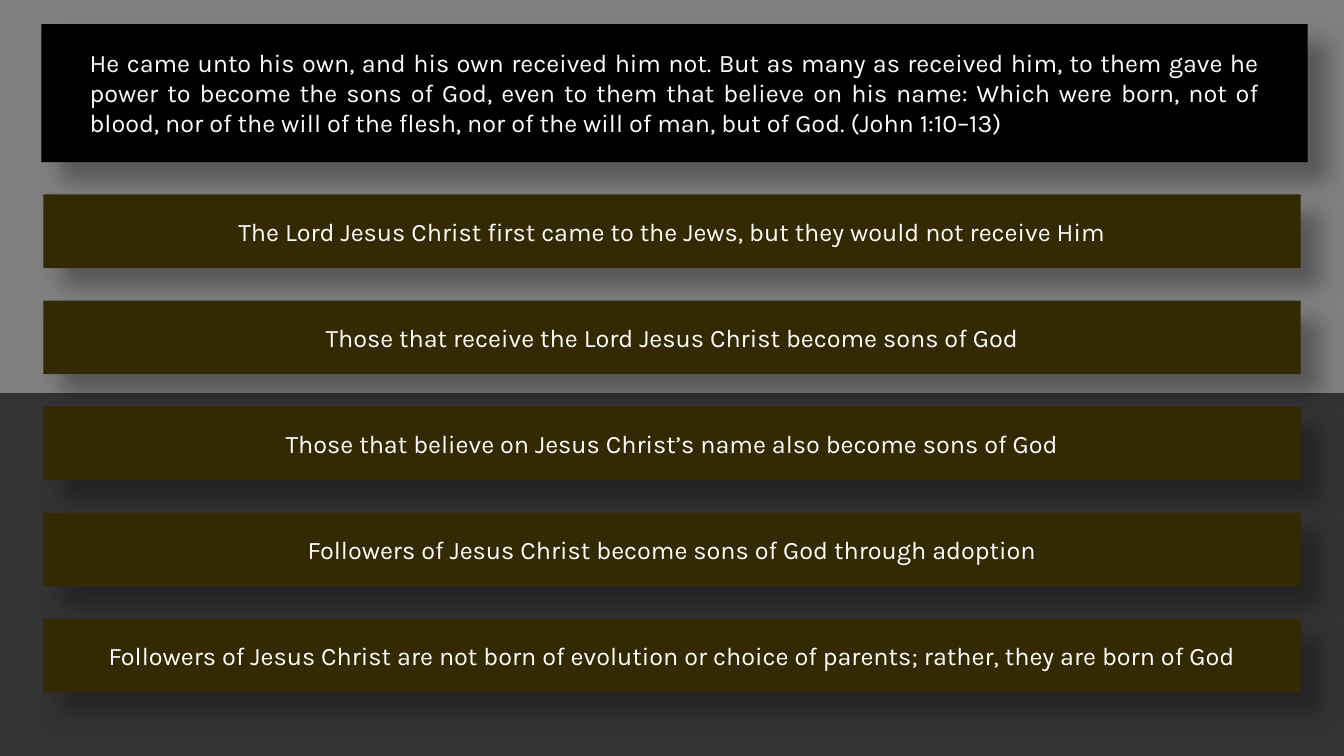
from lxml.etree import SubElement
from pptx import Presentation
from pptx.dml.color import RGBColor
from pptx.enum.shapes import MSO_SHAPE
from pptx.enum.text import MSO_ANCHOR, MSO_AUTO_SIZE, PP_ALIGN
from pptx.oxml.ns import qn
from pptx.util import Inches, Pt

WIDTH, HEIGHT = 13.33, 7.5
VERSE = (
    "He came unto his own, and his own received him not. But as many as received him, "
    "to them gave he power to become the sons of God, even to them that believe on his name: "
    "Which were born, not of blood, nor of the will of the flesh, nor of the will of man, "
    "but of God. (John 1:10–13)"
)
POINTS = [
    "The Lord Jesus Christ first came to the Jews, but they would not receive Him",
    "Those that receive the Lord Jesus Christ become sons of God",
    "Those that believe on Jesus Christ’s name also become sons of God",
    "Followers of Jesus Christ become sons of God through adoption",
    "Followers of Jesus Christ are not born of evolution or choice of parents; "
    "rather, they are born of God",
]


def color(value):
    return RGBColor.from_string(value)


class VerseSlide:
    font, size = "Karla", 18
    black, white, brown = "000000", "FFFFFF", "332903"

    def __init__(self, presentation):
        self.slide = presentation.slides.add_slide(presentation.slide_layouts[6])
        background = self.slide.background.fill
        background.solid()
        background.fore_color.rgb = color(self.white)

    def rectangle(self, left, top, width, height, fill):
        shape = self.slide.shapes.add_shape(
            MSO_SHAPE.RECTANGLE, Inches(left), Inches(top), Inches(width), Inches(height))
        shape.shadow.inherit = False
        shape.fill.solid()
        shape.fill.fore_color.rgb = color(fill)
        shape.line.fill.background()
        return shape

    def band(self, top, height, opacity):
        shape = self.rectangle(0, top, WIDTH, height, self.black)
        tone = shape._element.spPr.find(f"{qn('a:solidFill')}/{qn('a:srgbClr')}")
        SubElement(tone, qn("a:alpha"), val=str(opacity * 1000))

    def panel(self, left, top, width, height, fill):
        shape = self.rectangle(left, top, width, height, fill)
        effects = shape._element.spPr.find(qn("a:effectLst"))
        shadow = SubElement(
            effects, qn("a:outerShdw"), blurRad=str(Pt(15)), dist=str(Pt(18)),
            dir=str(45 * 60000), algn="tl", rotWithShape="0")
        tone = SubElement(shadow, qn("a:srgbClr"), val=self.black)
        SubElement(tone, qn("a:alpha"), val="30000")
        return shape

    def add_text(self, frame, text, alignment):
        frame.word_wrap = True
        paragraph = frame.paragraphs[0]
        paragraph.alignment = alignment
        run = paragraph.add_run()
        run.text = text
        run.font.name = self.font
        run.font.size = Pt(self.size)
        run.font.color.rgb = color(self.white)

    def verse(self, left, top, width, height, text):
        box = self.slide.shapes.add_textbox(
            Inches(left), Inches(top), Inches(width), Inches(height))
        self.add_text(box.text_frame, text, PP_ALIGN.JUSTIFY)
        box.text_frame.auto_size = MSO_AUTO_SIZE.SHAPE_TO_FIT_TEXT

    def point(self, top, text):
        shape = self.panel(0.43, top, 12.47, 0.73, self.brown)
        shape.text_frame.vertical_anchor = MSO_ANCHOR.MIDDLE
        self.add_text(shape.text_frame, text, PP_ALIGN.CENTER)


def main():
    presentation = Presentation()
    presentation.slide_width = Inches(WIDTH)
    presentation.slide_height = Inches(HEIGHT)
    page = VerseSlide(presentation)

    # Two-tone backdrop
    horizon = 3.9
    page.band(0, horizon, 50)
    page.band(horizon, HEIGHT - horizon, 80)

    # Bible verse
    page.panel(0.41, 0.24, 12.56, 1.37, page.black)
    page.verse(0.79, 0.42, 11.8, 1.01, VERSE)

    # Evenly spaced points
    first, last = 1.93, 6.14
    pitch = (last - first) / (len(POINTS) - 1)
    for index, text in enumerate(POINTS):
        page.point(first + index * pitch, text)

    presentation.save("out.pptx")


if __name__ == "__main__":
    main()
